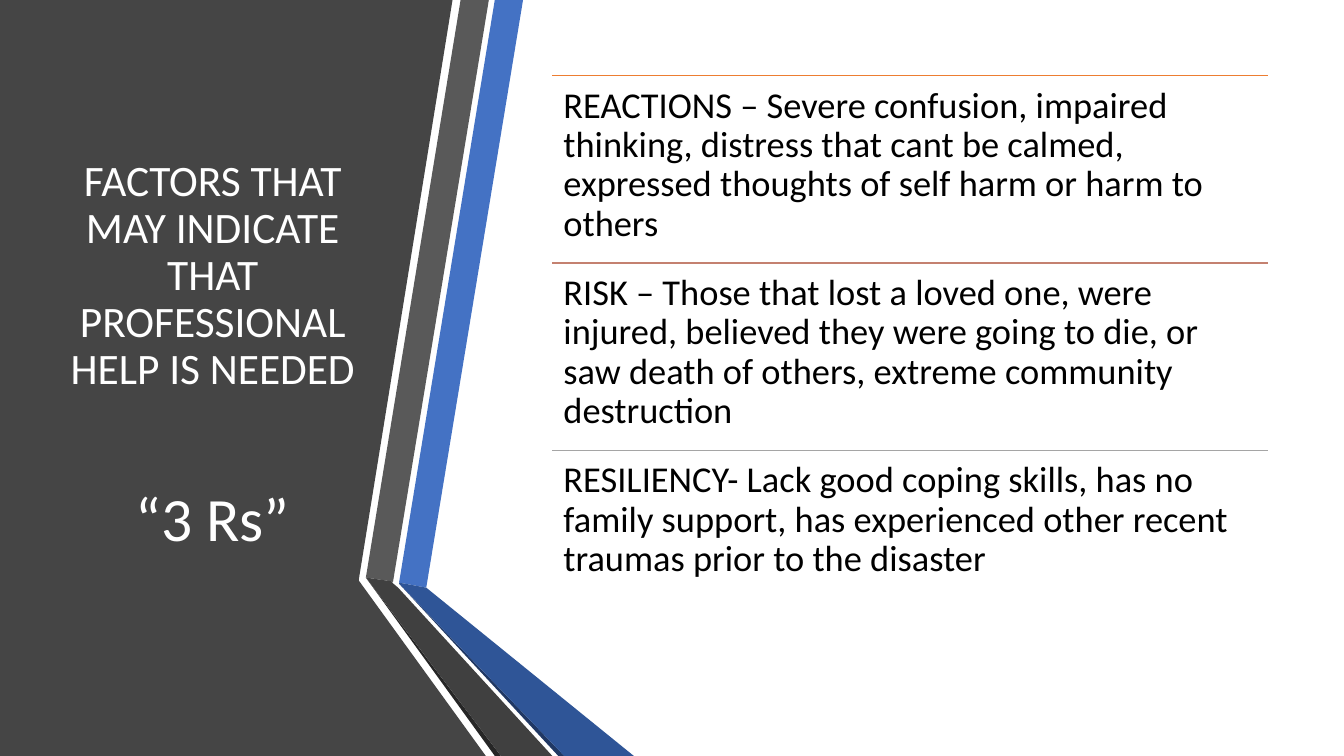
from lxml.etree import SubElement
from pptx import Presentation
from pptx.dml.color import RGBColor
from pptx.enum.shapes import MSO_CONNECTOR
from pptx.enum.text import MSO_ANCHOR, MSO_AUTO_SIZE, PP_ALIGN
from pptx.oxml.ns import qn
from pptx.util import Cm, Pt

COLORS = {
    "panel": "454545",
    "blue": "4472C4",
    "gray": "595959",
    "gray_edge": "262626",
    "blue_edge": "203864",
    "blue_fold": "2F5597",
    "gray_fold": "404040",
    "reactions": "ED7D31",
    "risk": "C48170",
    "resiliency": "A5A5A5",
    "title": "FFFFFF",
    "text": "000000",
}
GRID = Cm(0.0254)

ribbons = [
    ("panel", [(0, 0), (449, 0), (356, 575), (356, 576), (482, 750), (0, 750)]),
    ("blue", [(396, 578), (423, 583), (519, 0), (491, 0)]),
    ("gray", [(485, 0), (457, 0), (363, 573), (390, 577)]),
    ("gray_edge", [(363, 573), (491, 750), (497, 750)]),
    ("blue_edge", [(396, 579), (554, 750), (560, 750)]),
    ("blue_fold", [(396, 579), (560, 750), (629, 750), (423, 583), (396, 578)]),
    ("gray_fold", [(548, 750), (395, 583), (389, 578), (390, 577), (363, 573), (497, 750)]),
]
factors = [
    ("reactions", "REACTIONS – Severe confusion, impaired thinking, distress that cant be calmed, "
                  "expressed thoughts of self harm or harm to others"),
    ("risk", "RISK – Those that lost a loved one, were injured, believed they were going to die, "
             "or saw death of others, extreme community destruction"),
    ("resiliency", "RESILIENCY- Lack good coping skills, has no family support, "
                   "has experienced other recent traumas prior to the disaster"),
]


def rgb(name):
    return RGBColor.from_string(COLORS[name])


def write(paragraph, text, size, color):
    paragraph.text = text
    paragraph.line_spacing = 0.9
    font = paragraph.runs[0].font
    font.name = "Calibri"
    font.size = Pt(size)
    font.color.rgb = rgb(color)


prs = Presentation()
prs.slide_width = Cm(33.87)
prs.slide_height = Cm(19.05)
slide = prs.slides.add_slide(prs.slide_layouts[5])
shapes = slide.shapes

for color, points in ribbons:
    builder = shapes.build_freeform(*points[0], scale=GRID)
    builder.add_line_segments(points[1:], close=True)
    ribbon = builder.convert_to_shape()
    ribbon.shadow.inherit = False
    ribbon.fill.solid()
    ribbon.fill.fore_color.rgb = rgb(color)
    ribbon.line.fill.background()

title = shapes.title
shapes.element.append(title.element)
title.left, title.top, title.width, title.height = Cm(1.5), Cm(1.91), Cm(7.72), Cm(14.18)
heading = title.text_frame
heading.word_wrap = True
heading.auto_size = MSO_AUTO_SIZE.NONE
heading.vertical_anchor = MSO_ANCHOR.MIDDLE
write(heading.paragraphs[0], "FACTORS THAT MAY INDICATE THAT PROFESSIONAL HELP IS NEEDED", 31, "title")
three_rs = heading.add_paragraph()
write(three_rs, "“3 Rs”", 44, "title")
three_rs.space_before = Pt(68)
for paragraph in heading.paragraphs:
    paragraph.alignment = PP_ALIGN.CENTER

left, top, width, height = Cm(13.92), Cm(1.91), Cm(18.03), Cm(4.72)
for row, (color, text) in enumerate(factors):
    y = top + row * height
    rule = shapes.add_connector(MSO_CONNECTOR.STRAIGHT, left, y, left + width, y)
    rule.line.color.rgb = rgb(color)
    rule.line.width = Pt(1)
    SubElement(rule._element.spPr, qn("a:effectLst"))

    factor = shapes.add_textbox(left, y, width, height).text_frame
    factor.word_wrap = True
    factor.margin_left = factor.margin_right = Cm(0.28)
    factor.margin_top = factor.margin_bottom = Cm(0.28)
    write(factor.paragraphs[0], text, 26, "text")

prs.save("out.pptx")
